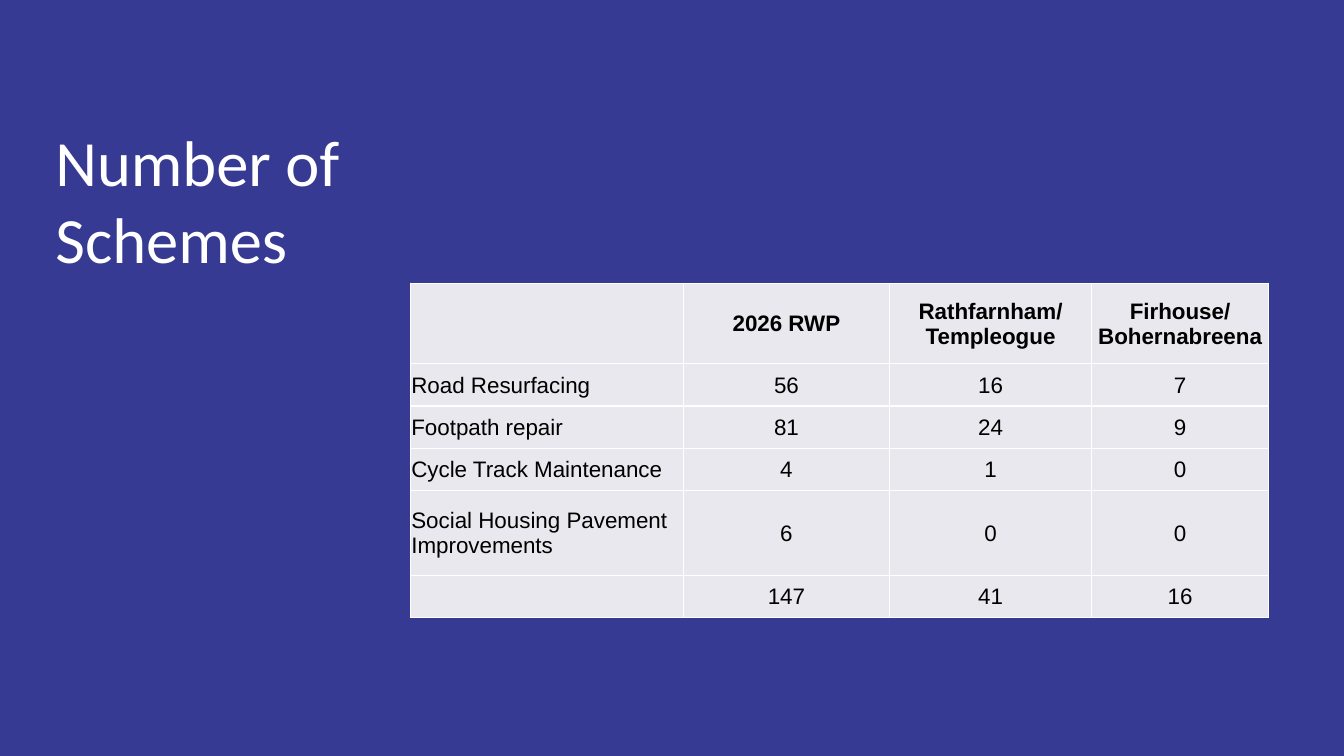
from dataclasses import dataclass

from lxml.etree import SubElement
from pptx import Presentation
from pptx.dml.color import RGBColor
from pptx.enum.text import MSO_ANCHOR as Anchor, PP_ALIGN as Align
from pptx.oxml.ns import qn
from pptx.util import Inches, Pt


@dataclass(frozen=True)
class Theme:
    """Colours, fonts and type sizes of the slide."""
    background: str = "363A92"
    title_color: str = "FFFFFF"
    cell_fill: str = "E8E8EE"
    border: str = "FFFFFF"
    cell_text: str = "000000"
    title_font: str = "Calibri"
    table_font: str = "Arial"
    title_size: float = 46.1
    table_size: float = 16
    border_width: float = 1


THEME = Theme()
WIDTH, HEIGHT = Inches(13.33), Inches(7.5)
ROW = Inches(0.42)
COLUMN_WIDTHS = (2.71, 2.04, 2.01, 1.75)
ROW_SPANS = (1.9, 1, 1, 1, 2, 1)
SCHEMES = (
    ("", "2026 RWP", "Rathfarnham/\nTempleogue", "Firhouse/\nBohernabreena"),
    ("Road Resurfacing", "56", "16", "7"),
    ("Footpath repair", "81", "24", "9"),
    ("Cycle Track Maintenance", "4", "1", "0"),
    ("Social Housing Pavement Improvements", "6", "0", "0"),
    ("", "147", "41", "16"),
)


def add_text(paragraph, text, font, size, color, bold=False):
    """Add text to a paragraph as runs parted by line breaks."""
    for index, line in enumerate(text.split("\n")):
        if index:
            paragraph.add_line_break()
        run = paragraph.add_run()
        run.text = line
        run.font.name = font
        run.font.size = Pt(size)
        run.font.bold = bold
        run.font.color.rgb = RGBColor.from_string(color)


def add_title(slide, text):
    """Add the slide title as a wrapped text box without margins."""
    box = slide.shapes.add_textbox(
        Inches(0.55), Inches(1.21), Inches(4.35), Inches(2.34))
    frame = box.text_frame
    frame.word_wrap = True
    frame.margin_left = frame.margin_right = 0
    frame.margin_top = frame.margin_bottom = 0
    add_text(frame.paragraphs[0], text, THEME.title_font, THEME.title_size,
             THEME.title_color)


def add_borders(cell):
    """Draw a solid border on the four sides of a cell."""
    properties = cell._tc.get_or_add_tcPr()
    for side in ("a:lnL", "a:lnR", "a:lnT", "a:lnB"):
        line = SubElement(properties, qn(side), w=str(Pt(THEME.border_width)))
        fill = SubElement(line, qn("a:solidFill"))
        SubElement(fill, qn("a:srgbClr"), val=THEME.border)


def fill_cell(cell, text, header, label):
    """Style one table cell and write its text."""
    add_borders(cell)
    cell.fill.solid()
    cell.fill.fore_color.rgb = RGBColor.from_string(THEME.cell_fill)
    cell.vertical_anchor = Anchor.MIDDLE
    cell.margin_left = cell.margin_right = cell.margin_top = Inches(0.01)
    cell.margin_bottom = 0
    paragraph = cell.text_frame.paragraphs[0]
    paragraph.alignment = Align.LEFT if label else Align.CENTER
    if text:
        add_text(paragraph, text, THEME.table_font, THEME.table_size,
                 THEME.cell_text, header)


def add_scheme_table(slide, rows):
    """Add the table of scheme counts."""
    frame = slide.shapes.add_table(
        len(rows), len(COLUMN_WIDTHS), Inches(4.07), Inches(2.81),
        Inches(sum(COLUMN_WIDTHS)), int(ROW * sum(ROW_SPANS)))
    table = frame.table
    table.horz_banding = False
    for column, width in zip(table.columns, COLUMN_WIDTHS):
        column.width = Inches(width)
    for row, span in zip(table.rows, ROW_SPANS):
        row.height = int(ROW * span)
    for row_index, values in enumerate(rows):
        for column_index, text in enumerate(values):
            fill_cell(table.cell(row_index, column_index), text,
                      header=row_index == 0, label=column_index == 0)


def main():
    """Build the slide and save it."""
    presentation = Presentation()
    presentation.slide_width, presentation.slide_height = WIDTH, HEIGHT
    slide = presentation.slides.add_slide(presentation.slide_layouts[6])
    slide.background.fill.solid()
    slide.background.fill.fore_color.rgb = RGBColor.from_string(
        THEME.background)
    add_title(slide, "Number of Schemes")
    add_scheme_table(slide, SCHEMES)
    presentation.save("out.pptx")


if __name__ == "__main__":
    main()
